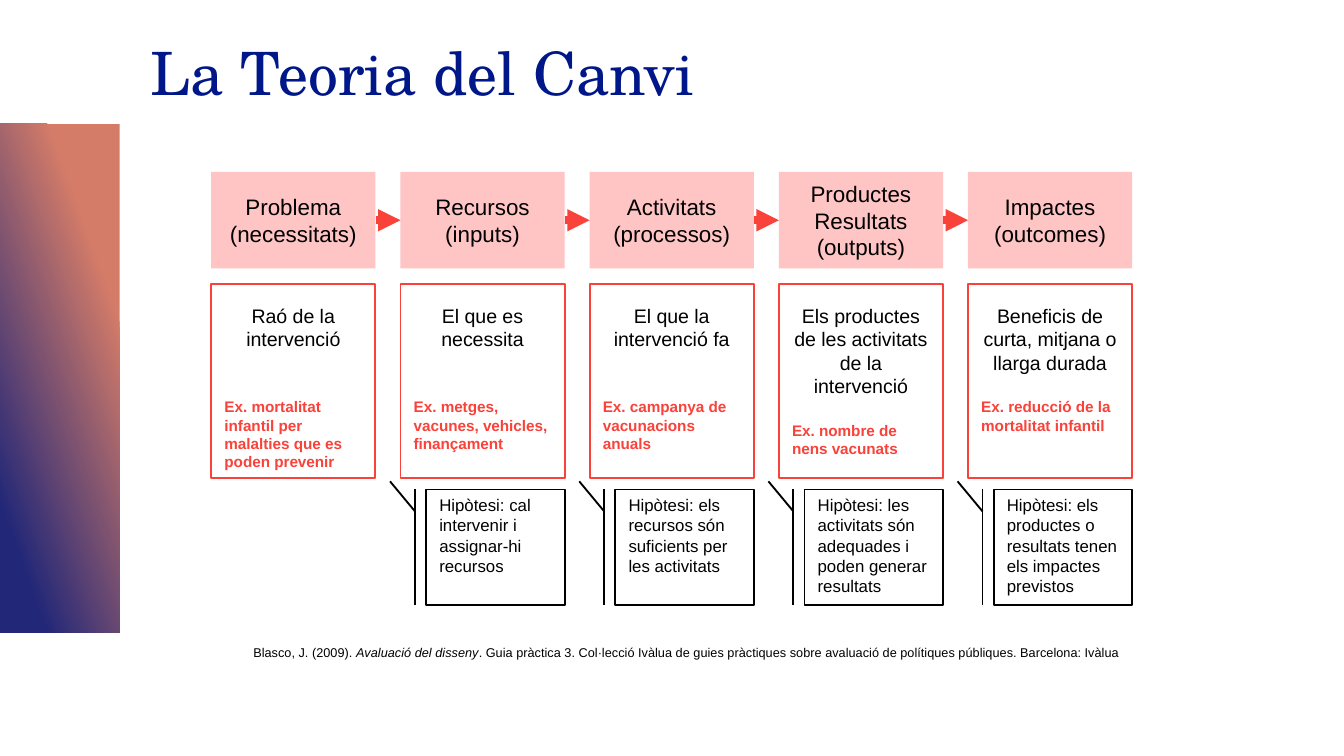
from pptx import Presentation
from pptx.dml.color import RGBColor
from pptx.enum.shapes import MSO_CONNECTOR as Link, MSO_SHAPE as Form
from pptx.enum.text import MSO_ANCHOR as Anchor, PP_ALIGN as Align
from pptx.oxml.ns import qn
from pptx.util import Pt
from lxml.etree import SubElement as Sub

RED, PINK, NAVY, BLACK, WHITE = "F9423A", "FFC5C5", "001789", "000000", "FFFFFF"


def paint(part, hue):
    part.solid()
    part.fore_color.rgb = RGBColor.from_string(hue)


def write(para, text, size=12, hue=BLACK, face="Arial", bold=False,
          slant=False, align=Align.LEFT, gap=0):
    para.alignment = align
    para.space_before = Pt(gap)
    run = para.add_run()
    run.text = text
    font = run.font
    font.name, font.size, font.bold, font.italic = face, Pt(size), bold, slant
    font.color.rgb = RGBColor.from_string(hue)


class Deck:
    def __init__(self, wide, high):
        self.show = Presentation()
        self.show.slide_width, self.show.slide_height = Pt(wide), Pt(high)
        self.slide = self.show.slides.add_slide(self.show.slide_layouts[5])

    def title(self, text, *area):
        item = self.slide.shapes.title
        item.left, item.top, item.width, item.height = map(Pt, area)
        frame = item.text_frame
        frame.vertical_anchor = Anchor.BOTTOM
        para = frame.paragraphs[0]
        para.line_spacing = 0.9
        write(para, text, size=32, hue=NAVY, face="TeX Gyre Schola")

    def shape(self, form, *area):
        item = self.slide.shapes.add_shape(form, *map(Pt, area))
        item.shadow.inherit = False
        item.line.fill.background()
        return item

    def band(self, *area):
        item = self.shape(Form.RECTANGLE, *area)
        item.rotation = 90
        item.element.spPr.find(qn("a:xfrm")).set("flipV", "1")
        item.fill.gradient()
        item.fill.gradient_angle = 70
        for stop, spot, hue in zip(item.fill.gradient_stops, (0.23, 0.85), ("D47C68", "222778")):
            stop.position = spot
            stop.color.rgb = RGBColor.from_string(hue)

    def box(self, area, lines, fill=WHITE, edge=None, form=Form.RECTANGLE,
            anchor=Anchor.TOP, top=3.6):
        item = self.shape(form, *area)
        paint(item.fill, fill)
        if edge:
            paint(item.line.fill, edge)
            item.line.width = Pt(1)
        frame = item.text_frame
        frame.word_wrap = True
        frame.vertical_anchor = anchor
        frame.margin_top = Pt(top)
        for place, (text, style) in enumerate(lines):
            para = frame.add_paragraph() if place else frame.paragraphs[0]
            write(para, text, **style)
        return item

    def note(self, area, text):
        item = self.box(area, [(text, dict(size=9))], edge=BLACK, top=2.9,
                        form=Form.LINE_CALLOUT_1_BORDER_AND_ACCENT_BAR)
        for place, size in enumerate((0.19, -0.08, -0.07, -0.26)):
            item.adjustments[place] = size

    def arrow(self, left, right, y):
        item = self.slide.shapes.add_connector(Link.STRAIGHT, Pt(right), Pt(y), Pt(left), Pt(y))
        paint(item.line.fill, RED)
        item.line.width = Pt(4)
        Sub(item.line._get_or_add_ln(), qn("a:headEnd"), type="triangle")
        Sub(item.element.spPr, qn("a:effectLst"))

    def source(self, area, parts):
        frame = self.slide.shapes.add_textbox(*map(Pt, area)).text_frame
        frame.word_wrap = True
        for text, slant in parts:
            write(frame.paragraphs[0], text, size=6.8, slant=slant, align=Align.RIGHT)


STEPS = [
    (["Problema", "(necessitats)"], "Raó de la intervenció", 25,
     "Ex. mortalitat infantil per malalties que es poden prevenir", None),
    (["Recursos", "(inputs)"], "El que es necessita", 25,
     "Ex. metges, vacunes, vehicles, finançament",
     "Hipòtesi: cal intervenir i assignar-hi recursos"),
    (["Activitats", "(processos)"], "El que la intervenció fa", 25,
     "Ex. campanya de vacunacions anuals",
     "Hipòtesi: els recursos són suficients per les activitats"),
    (["Productes", "Resultats", "(outputs)"],
     "Els productes de les activitats de la intervenció", 12.5,
     "Ex. nombre de nens vacunats",
     "Hipòtesi: les activitats són adequades i poden generar resultats"),
    (["Impactes", "(outcomes)"], "Beneficis de curta, mitjana o llarga durada", 12.5,
     "Ex. reducció de la mortalitat infantil",
     "Hipòtesi: els productes o resultats tenen els impactes previstos"),
]
LEFT, STEP, WIDE, INSET = 113.2, 101.35, 88, 13.7


def main():
    deck = Deck(720, 405)
    deck.band(-104.4, 170.6, 272.9, 64.1)
    deck.title("La Teoria del Canvi", 73.4, 19.4, 624.2, 42.5)
    deck.source((126.7, 342, 480.2, 15), [
        ("Blasco, J. (2009). ", False),
        ("Avaluació del disseny", True),
        (". Guia pràctica 3. Col·lecció Ivàlua de guies pràctiques sobre avaluació "
         "de polítiques públiques. Barcelona: Ivàlua", False),
    ])
    for place, (head, role, gap, case, guess) in enumerate(STEPS):
        x = LEFT + place * STEP
        deck.box((x, 92, WIDE, 51.8), [(line, dict(align=Align.CENTER)) for line in head],
                 fill=PINK, anchor=Anchor.MIDDLE)
        deck.box((x, 152, WIDE, 104.2), [
            (role, dict(size=10.5, align=Align.CENTER)),
            (case, dict(size=8.2, hue=RED, bold=True, gap=gap)),
        ], edge=RED, top=10.8)
        if guess:
            deck.arrow(x - STEP + WIDE, x, 118)
            deck.note((x + INSET, 262.2, WIDE - INSET, 62), guess)
    deck.show.save("out.pptx")


if __name__ == "__main__":
    main()
